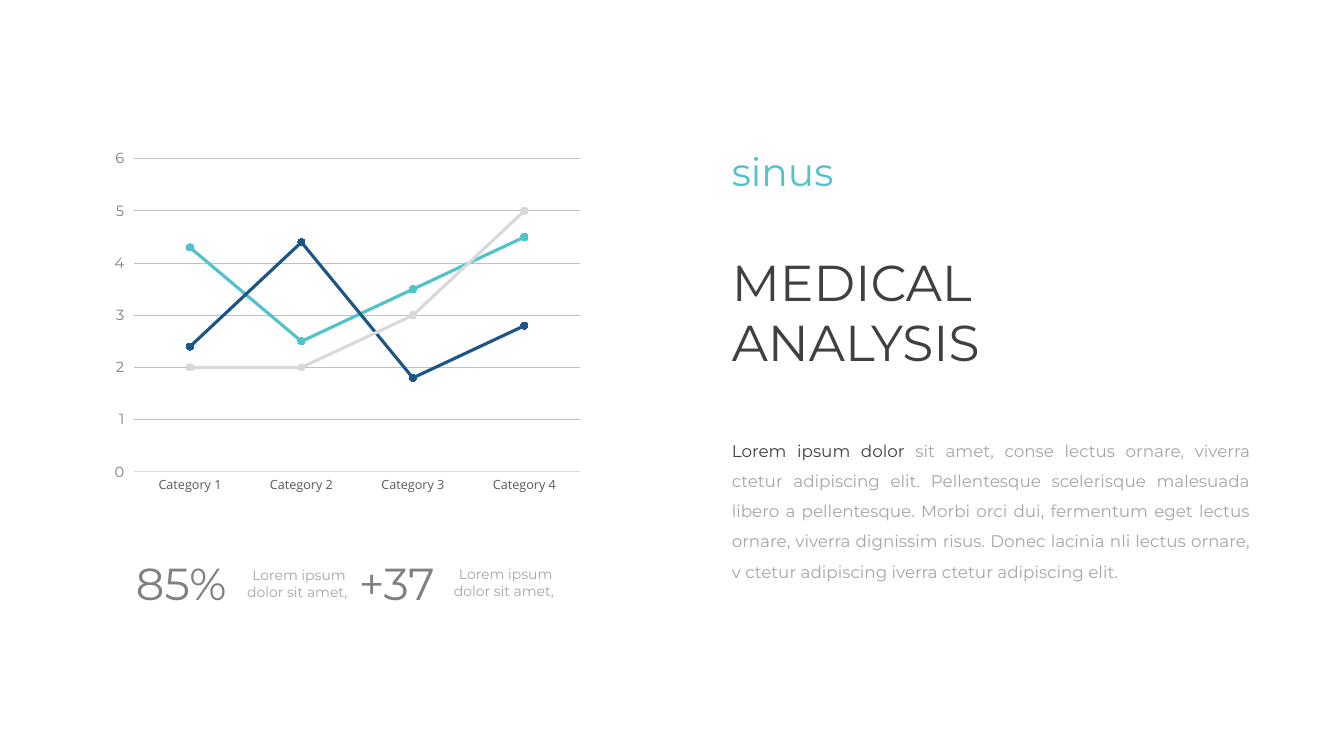
"""Build a medical analysis slide with a line chart, two key figures and a text column."""
from dataclasses import dataclass

import pptx
import pptx.chart.data
import pptx.dml.color
import pptx.enum.chart
import pptx.enum.text
import pptx.util

EMU_PER_PX = 9144


@dataclass(frozen=True)
class Theme:
    teal: str = "50C3CA"
    navy: str = "1C5686"
    silver: str = "D9D9D9"
    grid: str = "BFBFBF"
    dark: str = "404040"
    label: str = "595959"
    figure: str = "808080"
    body: str = "A6A6A6"
    font: str = "Montserrat"
    chart_font: str = "Open Sans"
    title_size: float = 36
    figure_size: float = 32
    brow_size: float = 28
    body_size: float = 12
    value_size: float = 10.5
    caption_size: float = 10
    category_size: float = 9


def px(length):
    return pptx.util.Emu(length * EMU_PER_PX)


def rgb(color):
    return pptx.dml.color.RGBColor.from_string(color)


class SlideBuilder:
    def __init__(self, slide, theme):
        self.slide = slide
        self.theme = theme

    def style(self, font, size, color, name=None):
        font.name = name or self.theme.font
        font.size = pptx.util.Pt(size)
        font.color.rgb = rgb(color)

    def line(self, line_format, color, width):
        line_format.color.rgb = rgb(color)
        line_format.width = pptx.util.Pt(width)

    def text(self, box, paragraphs, size, color, align="LEFT", spacing=None):
        shape = self.slide.shapes.add_textbox(*map(px, box))
        frame = shape.text_frame
        frame.word_wrap = True
        frame.auto_size = pptx.enum.text.MSO_AUTO_SIZE.SHAPE_TO_FIT_TEXT
        frame.text = "\n".join(paragraphs)
        for paragraph in frame.paragraphs:
            paragraph.alignment = pptx.enum.text.PP_ALIGN[align]
            paragraph.line_spacing = spacing
            self.style(paragraph.font, size, color)
        return frame

    def line_chart(self, box, categories, series_list):
        theme = self.theme
        data = pptx.chart.data.CategoryChartData()
        data.categories = categories
        for name, _, values in series_list:
            data.add_series(name, values)
        chart = self.slide.shapes.add_chart(
            pptx.enum.chart.XL_CHART_TYPE.LINE_MARKERS, *map(px, box), data).chart
        chart.has_legend = False
        chart.has_title = False
        self.style(chart.font, theme.category_size, theme.label, theme.chart_font)

        category_axis = chart.category_axis
        category_axis.major_tick_mark = pptx.enum.chart.XL_TICK_MARK.NONE
        self.style(category_axis.tick_labels.font, theme.category_size, theme.label, theme.chart_font)
        self.line(category_axis.format.line, theme.silver, 0.75)

        value_axis = chart.value_axis
        value_axis.minimum_scale, value_axis.maximum_scale = 0, 6
        value_axis.major_unit = 1
        value_axis.format.line.fill.background()
        self.style(value_axis.tick_labels.font, theme.value_size, theme.figure)
        self.line(value_axis.major_gridlines.format.line, theme.grid, 0.75)

        chart.plots[0].vary_by_categories = False
        for series, (_, color, _) in zip(chart.plots[0].series, series_list):
            series.smooth = False
            self.line(series.format.line, color, 2.25)
            marker = series.marker
            marker.style = pptx.enum.chart.XL_MARKER_STYLE.CIRCLE
            marker.size = 5
            marker.format.fill.solid()
            marker.format.fill.fore_color.rgb = rgb(color)
            self.line(marker.format.line, color, 0.75)


def main():
    presentation = pptx.Presentation()
    presentation.slide_width, presentation.slide_height = px(1333), px(750)
    theme = Theme()
    builder = SlideBuilder(presentation.slides.add_slide(presentation.slide_layouts[6]), theme)

    builder.text((716, 141, 391, 57), ["sinus"], theme.brow_size, theme.teal)
    builder.text((716, 244, 391, 131), ["MEDICAL", "ANALYSIS"], theme.title_size, theme.dark)
    body = builder.text((716, 422, 534, 158), ["Lorem ipsum dolor "],
                        theme.body_size, theme.body, "JUSTIFY", 1.5)
    paragraph = body.paragraphs[0]
    paragraph.runs[0].font.color.rgb = rgb(theme.dark)
    paragraph.add_run().text = (
        "sit amet, conse lectus ornare, viverra ctetur adipiscing elit. Pellentesque "
        "scelerisque malesuada libero a pellentesque. Morbi orci dui, fermentum eget "
        "lectus ornare, viverra dignissim risus. Donec lacinia nli lectus ornare, "
        "v ctetur adipiscing iverra ctetur adipiscing elit.")

    builder.line_chart(
        (104, 141, 481, 356),
        [f"Category {number}" for number in range(1, 5)],
        [("Series 1", theme.teal, (4.3, 2.5, 3.5, 4.5)),
         ("Series 2", theme.navy, (2.4, 4.4, 1.8, 2.8)),
         ("Series 3", theme.silver, (2, 2, 3, 5))])

    for figure, left, width, caption_left, caption_top in (
            ("85%", 125, 122, 234, 557), ("+37", 346, 109, 439, 556)):
        builder.text((left, 546, width, 64), [figure], theme.figure_size, theme.figure)
        builder.text((caption_left, caption_top, 125, 44), ["Lorem ipsum dolor sit amet, "],
                     theme.caption_size, theme.body, "CENTER")

    presentation.save("out.pptx")


if __name__ == "__main__":
    main()
